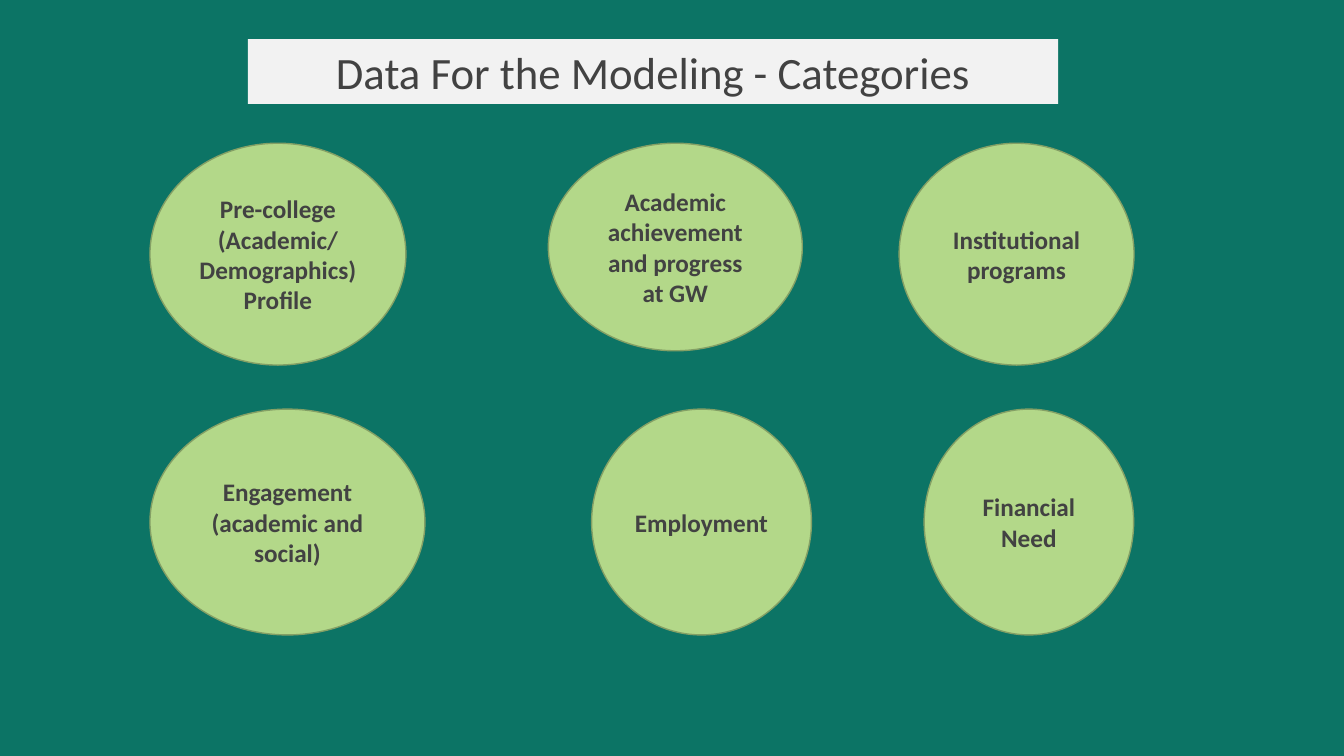
"""Build the slide of data categories used for the modeling."""
from pptx import Presentation
from pptx.dml.color import RGBColor
from pptx.enum.shapes import MSO_SHAPE
from pptx.enum.text import MSO_ANCHOR, MSO_AUTO_SIZE, PP_ALIGN
from pptx.util import Cm, Pt

TITLE = "Data For the Modeling - Categories"
TITLE_BOX = (6.25, 0.99, 20.42, 1.63)
ROWS = [
    (3.61, [
        ("Pre-college (Academic/ Demographics) Profile", 3.78, 6.45, 5.59),
        ("Academic achievement and progress at GW", 13.82, 6.4, 5.23),
        ("Institutional programs", 22.66, 5.92, 5.59),
    ]),
    (10.31, [
        ("Engagement (academic and social)", 3.78, 6.93, 5.69),
        ("Employment", 14.91, 5.54, 5.69),
        ("Financial Need", 23.29, 5.28, 5.69),
    ]),
]
COLORS = {"back": "0C7465", "oval": "B3D889", "edge": "84A065",
          "title": "F2F2F2", "text": "424242"}


def color(name):
    return RGBColor.from_string(COLORS[name])


def add_label(s, kind, box, text, fill, size, bold):
    sp = s.shapes.add_shape(kind, *(Cm(v) for v in box))
    sp.shadow.inherit = False
    sp.fill.solid()
    sp.fill.fore_color.rgb = color(fill)
    tf = sp.text_frame
    tf.word_wrap = True
    tf.text = text
    p = tf.paragraphs[0]
    p.alignment = PP_ALIGN.CENTER
    font = p.runs[0].font
    font.name, font.size, font.bold = "Calibri", Pt(size), bold
    font.color.rgb = color("text")
    return sp


def main():
    prs = Presentation()
    prs.slide_width, prs.slide_height = Cm(33.87), Cm(19.05)
    s = prs.slides.add_slide(prs.slide_layouts[6])
    s.background.fill.solid()
    s.background.fill.fore_color.rgb = color("back")

    for top, categories in ROWS:
        for text, left, width, height in categories:
            sp = add_label(s, MSO_SHAPE.OVAL, (left, top, width, height),
                           text, "oval", 18, True)
            sp.line.color.rgb = color("edge")
            sp.line.width = Pt(1)
            sp.text_frame.vertical_anchor = MSO_ANCHOR.MIDDLE

    sp = add_label(s, MSO_SHAPE.RECTANGLE, TITLE_BOX, TITLE, "title", 32, False)
    sp.line.fill.background()
    sp.text_frame.vertical_anchor = MSO_ANCHOR.TOP
    sp.text_frame.auto_size = MSO_AUTO_SIZE.SHAPE_TO_FIT_TEXT

    prs.save("out.pptx")


if __name__ == "__main__":
    main()
